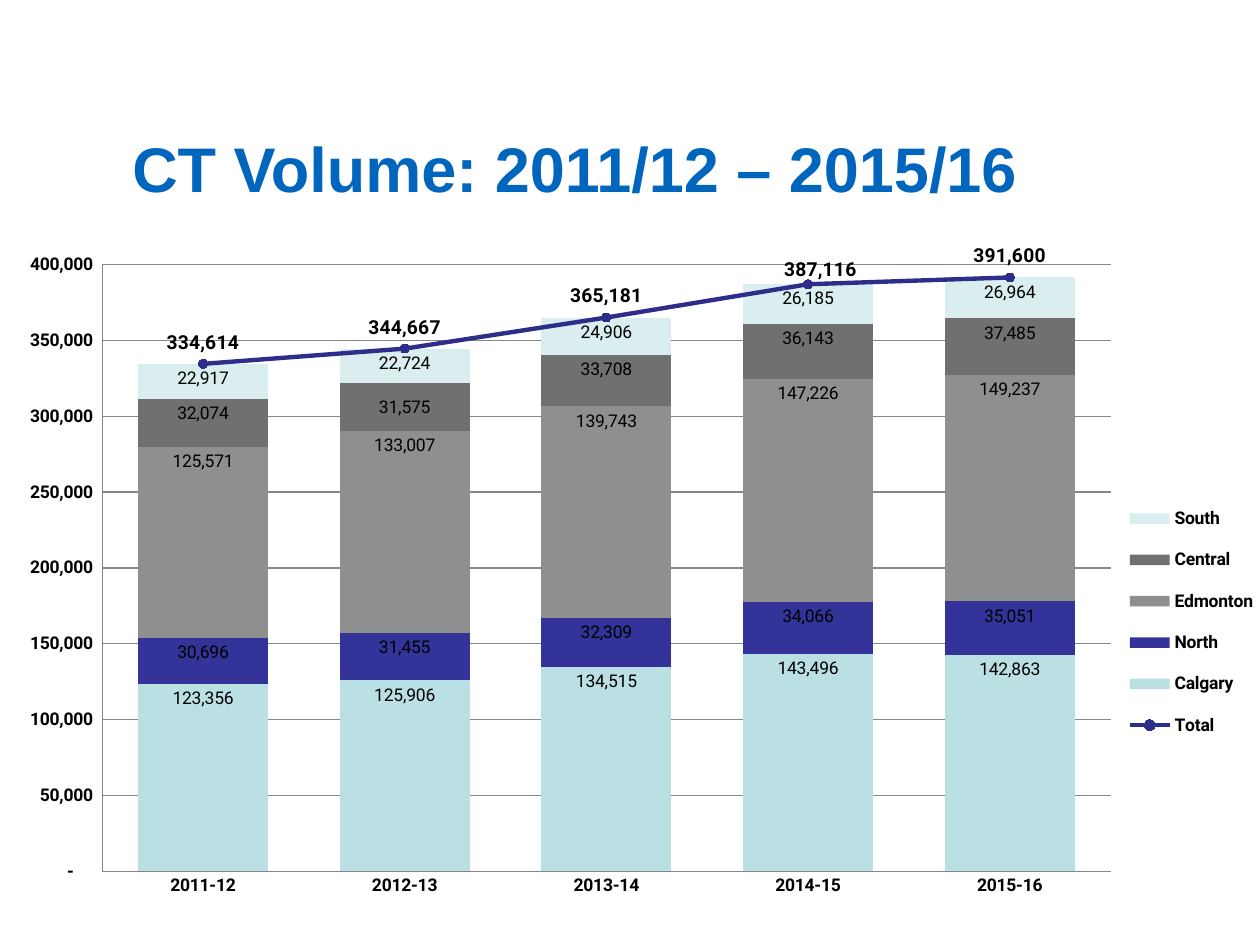
from pptx import Presentation, util as u, oxml
from pptx.chart import data as cd
from pptx.dml import color
from pptx.enum import chart as ce, text
from pptx.oxml import ns

Pt = u.Pt
HUE = {"title": "0065BD", "text": "000000", "grid": "868686",
       "Calgary": "BBE0E3", "North": "333399", "Edmonton": "8F8F8F",
       "Central": "707070", "South": "DAEDEF", "Total": "2D2D8A"}
FMT = '_(* #,##0_);_(* \\(#,##0\\);_(* "-"??_);_('
YEARS = ["2011-12", "2012-13", "2013-14", "2014-15", "2015-16"]
ROWS = {
    "Calgary": (123356, 125906, 134515, 143496, 142863),
    "North": (30696, 31455, 32309, 34066, 35051),
    "Edmonton": (125571, 133007, 139743, 147226, 149237),
    "Central": (32074, 31575, 33708, 36143, 37485),
    "South": (22917, 22724, 24906, 26185, 26964),
    "Total": (334614, 344667, 365181, 387116, 391600),
}


def style(font, name, size, bold, hue="text"):
    for key, val in {"name": name, "size": Pt(size), "bold": bold}.items():
        setattr(font, key, val)
    font.color.rgb = color.RGBColor.from_string(HUE[hue])


def layout(**vals):
    tags = "".join(f'<c:{k} val="{v}"/>' for k, v in vals.items())
    return oxml.parse_xml(f'<c:layout {ns.nsdecls("c")}><c:manualLayout>{tags}'
                          '</c:manualLayout></c:layout>')


prs = Presentation()
prs.slide_width, prs.slide_height = Pt(720), Pt(540)
slide = prs.slides.add_slide(prs.slide_layouts[6])

box = slide.shapes.add_textbox(Pt(36.7), Pt(38.9), Pt(679.7), Pt(113))
frame = box.text_frame
for key, val in {"word_wrap": True, "vertical_anchor": text.MSO_ANCHOR.MIDDLE,
                 "margin_left": Pt(3.6), "margin_right": Pt(3.6),
                 "margin_top": Pt(3.6), "margin_bottom": Pt(3.6)}.items():
    setattr(frame, key, val)
para = frame.paragraphs[0]
para._p.get_or_add_pPr().set("indent", str(Pt(35.3)))
run = para.add_run()
run.text = "CT Volume: 2011/12 – 2015/16"
style(run.font, "Arial", 36, True, "title")

data = cd.CategoryChartData(number_format=FMT)
data.categories = YEARS
for name, vals in ROWS.items():
    data.add_series(name, vals)
chart = slide.shapes.add_chart(ce.XL_CHART_TYPE.COLUMN_STACKED, Pt(8.6), Pt(139.7),
                               Pt(711.4), Pt(385.2), data).chart
style(chart.font, "Roboto", 10, False)
chart.has_title = False
bars = chart.plots[0]
bars.gap_width, bars.overlap = 55, 100
bars.vary_by_categories = False

bar = bars._element
line = oxml.parse_xml(f'<c:lineChart {ns.nsdecls("c")}><c:grouping val="standard"/>'
                      '<c:varyColors val="0"/><c:marker val="1"/></c:lineChart>')
total = bar.findall(ns.qn("c:ser"))[-1]
for old in total.findall(ns.qn("c:invertIfNegative")):
    total.remove(old)
line.insert(2, total)
for axis in bar.findall(ns.qn("c:axId")):
    line.append(oxml.parse_xml(f'<c:axId {ns.nsdecls("c")} val="{axis.get("val")}"/>'))
bar.addnext(line)

pos = ce.XL_LABEL_POSITION
for ser in chart.series:
    rgb = color.RGBColor.from_string(HUE[ser.name])
    top = ser.name == "Total"
    labels = ser.data_labels
    for key, val in {"show_value": True, "number_format": FMT,
                     "number_format_is_linked": False,
                     "position": pos.ABOVE if top else pos.INSIDE_END}.items():
        setattr(labels, key, val)
    style(labels.font, "Roboto", 11 if top else 10, top)
    if top:
        ser.smooth = False
        ser.format.line.width = Pt(2.5)
        ser.format.line.color.rgb = rgb
        ser.marker.style, ser.marker.size = ce.XL_MARKER_STYLE.CIRCLE, 5
        fill = ser.marker.format.fill
        ser.marker.format.line.color.rgb = rgb
    else:
        fill = ser.format.fill
    fill.solid()
    fill.fore_color.rgb = rgb
    if ser.name == "Central":
        label = ser.points[1].data_label
        style(label.font, "Roboto", 10, False)
        label.position = pos.CENTER
    if top:
        label = ser.points[3].data_label
        style(label.font, "Roboto", 11, True)
        label.position = pos.ABOVE
        mark = labels._element.find(ns.qn("c:dLbl")).find(ns.qn("c:idx"))
        mark.addnext(layout(x=0.01, y=0.01))

for axis in (chart.category_axis, chart.value_axis):
    style(axis.tick_labels.font, "Roboto", 10, True)
    axis.major_tick_mark = axis.minor_tick_mark = ce.XL_TICK_MARK.NONE
    axis.format.line.color.rgb = color.RGBColor.from_string(HUE["grid"])
    axis.format.line.width = Pt(0.75)
scale = chart.value_axis
for key, val in {"minimum_scale": 0, "maximum_scale": 400000, "major_unit": 50000,
                 "has_major_gridlines": True}.items():
    setattr(scale, key, val)
scale.tick_labels.number_format = FMT
scale.tick_labels.number_format_is_linked = False
grid = scale.major_gridlines.format.line
grid.color.rgb = color.RGBColor.from_string(HUE["grid"])
grid.width = Pt(0.75)

area = bar.getparent()
for old in area.findall(ns.qn("c:layout")):
    area.remove(old)
area.insert(0, layout(layoutTarget="inner", xMode="edge", yMode="edge",
                      x=0.07, y=0.03, w=0.81, h=0.9))

chart.has_legend = True
key = chart.legend
key.position = ce.XL_LEGEND_POSITION.RIGHT
key.include_in_layout = False
style(key.font, "Roboto", 10, True)
for old in key._element.findall(ns.qn("c:layout")):
    key._element.remove(old)
key._element.find(ns.qn("c:legendPos")).addnext(
    layout(xMode="edge", yMode="edge", x=0.89, y=0.36, w=0.11, h=0.4))

prs.save("out.pptx")
